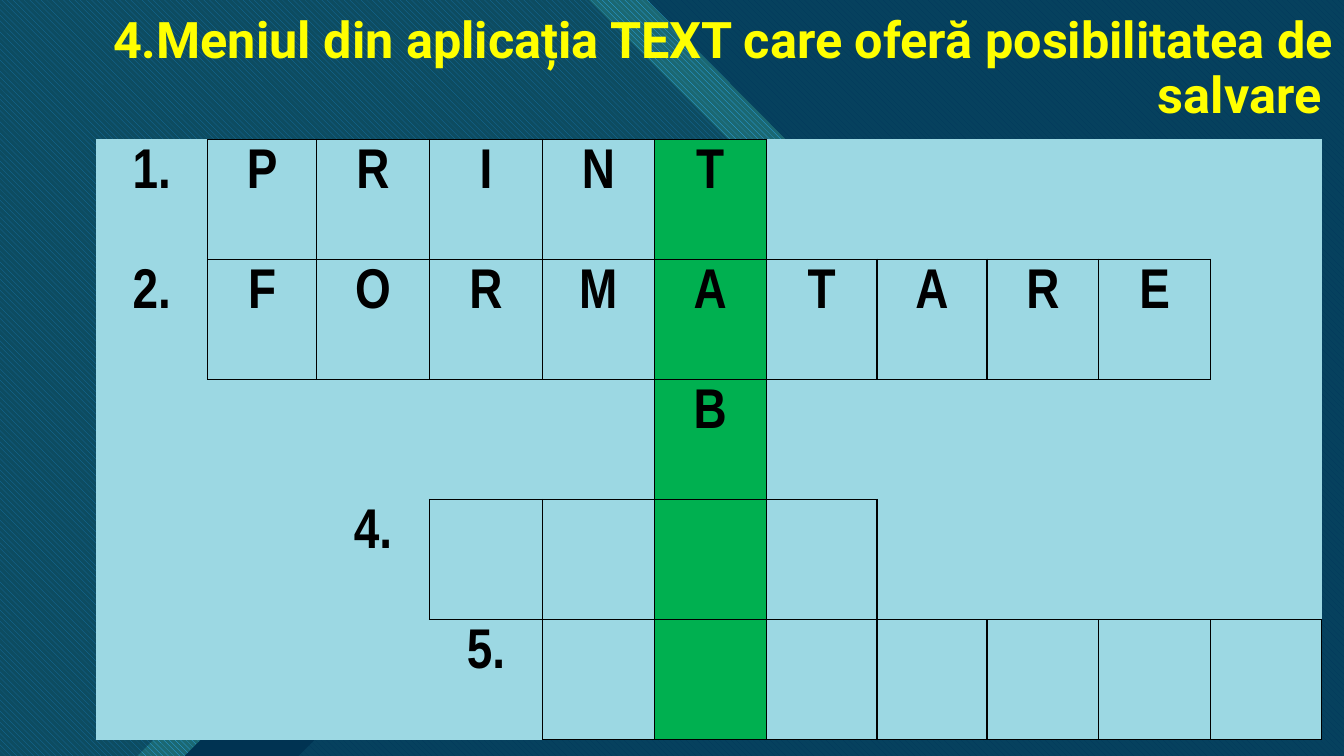
import pptx
import pptx.util
import pptx.dml.color
import pptx.enum.dml
import pptx.enum.text
import pptx.oxml.ns
import lxml.etree

W, H = 13.33, 7.5
COLORS = {
    "base": "0065A4", "teal": "47C3D3", "navy": "003352", "sky": "2FAFFF",
    "pine": "1B6872", "cell": "9CD8E3", "key": "00B050", "ink": "000000",
    "title": "FFFF00",
}
PATTERN = pptx.enum.dml.MSO_PATTERN.WIDE_DOWNWARD_DIAGONAL
ALIGN = pptx.enum.text.PP_ALIGN

PANEL = [(4.23, 0), (W, 0), (W, H), (0, H), (0, 3.63), (2.22, 1.41), (2.82, 1.41)]
# Each layer: outline, colour, pattern back colour, opacity in percent
LAYERS = [
    ([(3.96, 0), (W, 0), (W, H), (0, H), (0, 3.44), (2.01, 1.41), (2.54, 1.41)],
     "teal", None, 74),
    (PANEL, "base", "teal", 100),
    (PANEL, "navy", None, 90),
    ([(0.21, 0.9), (6.64, 0.9), (8.1, 2.36), (2.96, H), (0.21, H)], "navy", None, 100),
    ([(0, 0), (6.42, 0), (7.87, 1.46), (1.83, H), (0, H)], "sky", "pine", 100),
    ([(0, 0), (5.84, 0), (7.35, 1.51), (1.36, H), (0, H)], "navy", None, 51),
]

COL_WIDTHS = [1.11, 1.08, 1.12, 1.12, 1.11, 1.11, 1.1, 1.09, 1.11, 1.11, 1.1]
KEY_COL = 5
# Each row: clue number, first box, number of boxes, letters by column
ROWS = [
    ("1.", 1, 5, dict(enumerate("PRINT", 1))),
    ("2.", 1, 9, dict(enumerate("FORMATARE", 1))),
    ("", 5, 1, {KEY_COL: "B"}),
    ("4.", 3, 4, {}),
    ("5.", 4, 7, {}),
]


def rgb(name):
    return pptx.dml.color.RGBColor.from_string(COLORS[name])


def solid(fill, name):
    fill.solid()
    fill.fore_color.rgb = rgb(name)


def sub(parent, tag, **attrs):
    return lxml.etree.SubElement(parent, pptx.oxml.ns.qn(tag), attrs)


def add_text(p, text, align, spacing, **font):
    p.alignment, p.line_spacing = align, spacing
    r = p.add_run()
    r.text = text
    color = font.pop("color")
    for key, value in font.items():
        setattr(r.font, key, value)
    r.font.color.rgb = rgb(color)


def add_layer(slide, points, color, back, opacity):
    start, *rest = [tuple(map(pptx.util.Inches, point)) for point in points]
    builder = slide.shapes.build_freeform(*start)
    builder.add_line_segments(rest, close=True)
    sp = builder.convert_to_shape()
    sp.shadow.inherit = False
    sp.line.fill.background()
    if back:
        sp.fill.patterned()
        sp.fill.pattern = PATTERN
        sp.fill.fore_color.rgb, sp.fill.back_color.rgb = rgb(color), rgb(back)
    else:
        solid(sp.fill, color)
        clr = sp._element.spPr.find(".//" + pptx.oxml.ns.qn("a:srgbClr"))
        sub(clr, "a:alpha", val=str(opacity * 1000))


def add_backdrop(slide):
    solid(slide.background.fill, "base")
    for layer in LAYERS:
        add_layer(slide, *layer)


def add_title(slide, text, *box):
    tf = slide.shapes.add_textbox(*map(pptx.util.Inches, box)).text_frame
    tf.word_wrap = True
    tf.vertical_anchor = pptx.enum.text.MSO_ANCHOR.MIDDLE
    add_text(tf.paragraphs[0], text, ALIGN.RIGHT, 0.9, name="Roboto",
             size=pptx.util.Pt(36), bold=True, color="title")


def is_box(row, col):
    if not 0 <= row < len(ROWS):
        return False
    _, first, count, _ = ROWS[row]
    return first <= col < first + count


def set_borders(cell, row, col):
    """Rule every edge that touches a letter box and clear the others."""
    tc_pr = cell._tc.get_or_add_tcPr()
    sides = {"a:lnL": (0, -1), "a:lnR": (0, 1), "a:lnT": (-1, 0), "a:lnB": (1, 0)}
    for tag, (dr, dc) in sides.items():
        ln = sub(tc_pr, tag, w=str(pptx.util.Pt(1)))
        if is_box(row, col) or is_box(row + dr, col + dc):
            sub(sub(ln, "a:solidFill"), "a:srgbClr", val=COLORS["ink"])
        else:
            sub(ln, "a:noFill")


def add_crossword(slide, left, top, width, height):
    frame = slide.shapes.add_table(len(ROWS), len(COL_WIDTHS),
                                   *map(pptx.util.Inches, (left, top, width, height)))
    table = frame.table
    table.first_row = table.horz_banding = False
    for column, share in zip(table.columns, COL_WIDTHS):
        column.width = pptx.util.Inches(width * share / sum(COL_WIDTHS))
    side, end = pptx.util.Inches(0.07), pptx.util.Inches(0.05)
    margins = {"margin_left": side, "margin_right": side,
               "margin_top": end, "margin_bottom": end}
    for row, (number, first, _, letters) in enumerate(ROWS):
        texts = {first - 1: number, **letters}
        for col in range(len(COL_WIDTHS)):
            cell = table.cell(row, col)
            for key, value in margins.items():
                setattr(cell, key, value)
            set_borders(cell, row, col)
            solid(cell.fill, "key" if col == KEY_COL else "cell")
            if texts.get(col):
                add_text(cell.text_frame.paragraphs[0], texts[col], ALIGN.CENTER, 1.07,
                         name="Arial Narrow", size=pptx.util.Pt(40), bold=True, color="ink")


def main():
    prs = pptx.Presentation()
    prs.slide_width, prs.slide_height = pptx.util.Inches(W), pptx.util.Inches(H)
    slide = prs.slides.add_slide(prs.slide_layouts[6])
    add_backdrop(slide)
    add_crossword(slide, 0.95, 1.38, 12.16, 5.96)
    add_title(slide, "4.Meniul din aplicația TEXT care oferă posibilitatea de salvare ",
              0.4, 0, 12.93, 1.38)
    prs.save("out.pptx")


if __name__ == "__main__":
    main()
